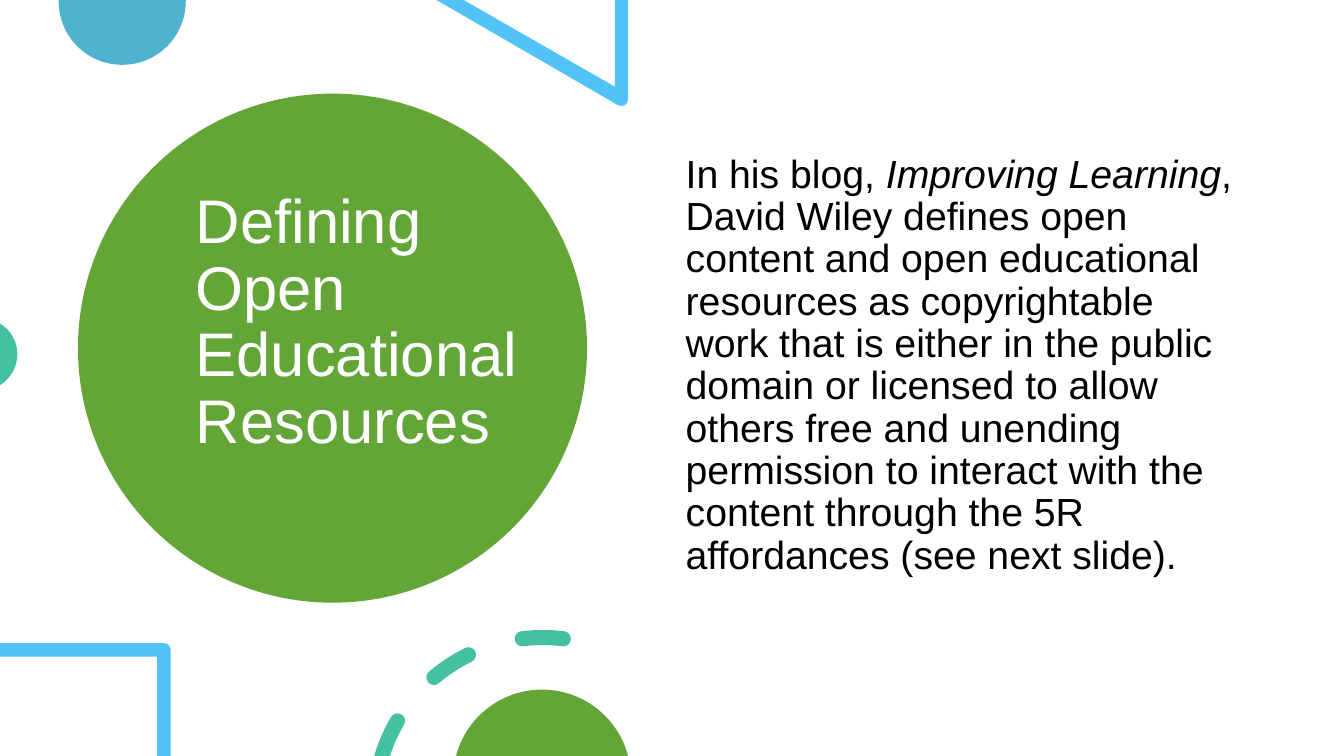
from math import cos, radians, sin, tan

from pptx import Presentation
from pptx.dml.color import RGBColor
from pptx.enum.shapes import MSO_SHAPE
from pptx.enum.text import MSO_ANCHOR, MSO_AUTO_SIZE, PP_ALIGN
from pptx.oxml.ns import qn
from pptx.util import Pt

TITLE = "Defining Open Educational Resources"
BODY = [
    ("In his blog, ", False),
    ("Improving Learning", True),
    (", David Wiley defines open content and open educational resources as "
     "copyrightable work that is either in the public domain or licensed to "
     "allow others free and unending permission to interact with the content "
     "through the 5R affordances (see next slide).", False),
]

THEME = {
    "font": "Arial",
    "title_size": 44,
    "body_size": 28,
    "line_spacing": 0.9,
    "green": "63A537",
    "blue": "4EB3CF",
    "sky": "51C3F9",
    "teal": "44C1A3",
    "white": "FFFFFF",
    "black": "000000",
}

WIDTH, HEIGHT = 960, 540
TITLE_BOX = (132.5, 58.3, 265, 298.1)
BODY_BOX = (482.7, 106.7, 414, 385.2)
TITLE_DISC = (55.7, 66.9, 363.6, 363.6)
TITLE_DROP = 47.5
RING_CENTER, RING_RADIUS, RING_HALF = (387.7, 575.6), 120.2, 5.4
RING_DASHES = [(229.7, 243.8), (263, 277)]
CUT_OUTER, CUT_INNER, CUT_DASH_END = 196.5, 198.1, 210.3


def polar(center, radius, angle):
    return center[0] + radius * cos(radians(angle)), center[1] + radius * sin(radians(angle))


def curves(center, radius, *angles):
    steps = []
    for start, end in zip(angles, angles[1:]):
        reach = radius * 4 / 3 * tan(radians(end - start) / 4)
        first, last = polar(center, radius, start), polar(center, radius, end)
        steps.append((polar(first, reach, start + 90), polar(last, -reach, end + 90), last))
    return steps


def arc(center, radius, *angles):
    return [polar(center, radius, angles[0])] + curves(center, radius, *angles)


def round_cap(angle, turn):
    middle = polar(RING_CENTER, RING_RADIUS, angle)
    return curves(middle, RING_HALF, turn, turn + 90, turn + 180)


def dash_body(outer_start, end, inner_start):
    return (arc(RING_CENTER, RING_RADIUS + RING_HALF, outer_start, end)
            + round_cap(end, end)
            + curves(RING_CENTER, RING_RADIUS - RING_HALF, end, inner_start))


def ring_dash(start, end):
    return dash_body(start, end, start) + round_cap(start, start + 180)


DECORATIONS = [
    ("blue", [[(132.7, 0)] + arc((87.3, 0.9), 45.4, 0, 90, 180) + [(41.9, 0)]]),
    ("sky", [[(448.6, 0), (439.2, 0), (439.2, 61.9), (331.2, 0), (311.8, 0)]
             + arc((443.8, 70.9), 4.8, 120, 90, 0)]),
    ("teal", [arc((-13.3, 253.1), 25.7, -58.8, 0, 58.8)]),
    ("sky", [[(0, 459.4), (0, 469.1), (112.3, 469.1), (112.3, HEIGHT), (121.9, HEIGHT)]
             + arc((117.1, 464.2), 4.8, 0, -90)]),
    ("teal", [dash_body(CUT_OUTER, CUT_DASH_END, CUT_INNER)]
     + [ring_dash(*dash) for dash in RING_DASHES]),
    ("green", [arc((387.2, 556.1), 63.5, 194.7, 270, 345.3)]),
]


def color(name):
    return RGBColor.from_string(THEME[name])


def paint(shape, name):
    shape.shadow.inherit = False
    shape.fill.solid()
    shape.fill.fore_color.rgb = color(name)
    shape.line.fill.background()


def is_curve(step):
    return len(step) == 3


def bend(shape, contours):
    segments = iter(list(shape.element.iter(qn("a:lnTo"))))
    for contour in contours:
        for step in contour[1:]:
            segment = next(segments)
            if is_curve(step):
                curve = segment.makeelement(qn("a:cubicBezTo"))
                segment.addprevious(curve)
                for part in (segment, next(segments), next(segments)):
                    curve.append(part[0])
                    part.getparent().remove(part)


def to_points(steps):
    points = [point for step in steps for point in (step if is_curve(step) else [step])]
    return [(Pt(x), Pt(y)) for x, y in points]


def add_outline(page, name, contours):
    builder = None
    for contour in contours:
        start, *rest = to_points(contour)
        if builder is None:
            builder = page.shapes.build_freeform(*start, scale=1.0)
        else:
            builder.move_to(*start)
        builder.add_line_segments(rest, close=True)
    shape = builder.convert_to_shape()
    bend(shape, contours)
    paint(shape, name)


def style_text(box, anchor, size, color_name):
    frame = box.text_frame
    frame.word_wrap = True
    frame.auto_size = MSO_AUTO_SIZE.NONE
    frame.vertical_anchor = anchor
    para = frame.paragraphs[0]
    para.alignment = PP_ALIGN.LEFT
    para.line_spacing = THEME["line_spacing"]
    for span in para.runs:
        span.font.name = THEME["font"]
        span.font.size = Pt(THEME[size])
        span.font.color.rgb = color(color_name)


def place_title(page):
    title = page.shapes.title
    title.left, title.top, title.width, title.height = map(Pt, TITLE_BOX)
    title.text_frame.text = TITLE
    title.text_frame.margin_top = Pt(3.6 + TITLE_DROP)
    style_text(title, MSO_ANCHOR.MIDDLE, "title_size", "white")
    disc = page.shapes.add_shape(MSO_SHAPE.OVAL, *map(Pt, TITLE_DISC))
    paint(disc, "green")
    title.element.addprevious(disc.element)


def place_body(page):
    box = page.shapes.add_textbox(*map(Pt, BODY_BOX))
    para = box.text_frame.paragraphs[0]
    for text, italic in BODY:
        span = para.add_run()
        span.text = text
        span.font.italic = italic
    style_text(box, MSO_ANCHOR.TOP, "body_size", "black")


def main():
    deck = Presentation()
    deck.slide_width, deck.slide_height = Pt(WIDTH), Pt(HEIGHT)
    page = deck.slides.add_slide(deck.slide_layouts[5])
    place_title(page)
    for name, contours in DECORATIONS:
        add_outline(page, name, contours)
    place_body(page)
    deck.save("out.pptx")


if __name__ == "__main__":
    main()
